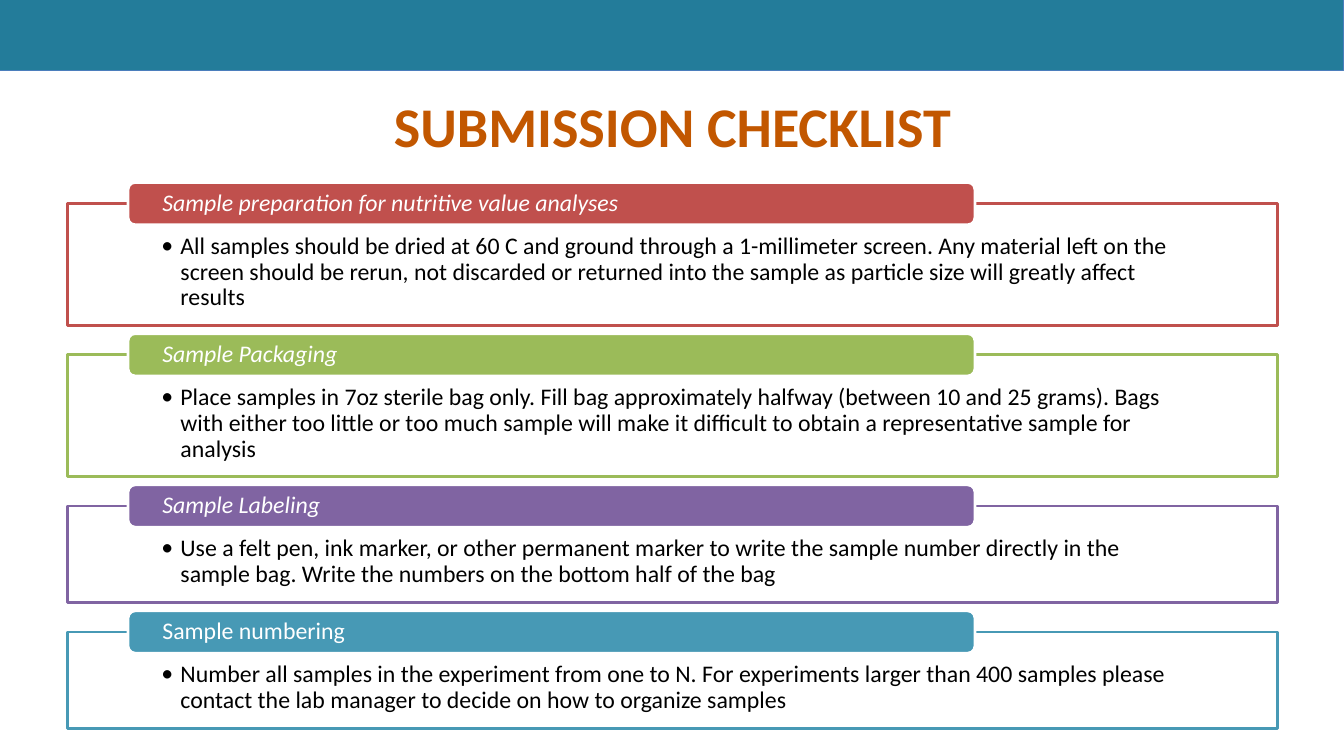
from lxml.etree import SubElement
from pptx import Presentation
from pptx.dml.color import RGBColor
from pptx.enum.shapes import MSO_SHAPE as Shape
from pptx.enum.text import MSO_ANCHOR as Anchor, MSO_AUTO_SIZE as AutoSize, PP_ALIGN as Align
from pptx.oxml.ns import qn
from pptx.util import Inches, Pt

# Content: heading, italic heading, colour, box height, text
TITLE = "SUBMISSION CHECKLIST"
CHECKS = [
    ("Sample preparation for nutritive value analyses", True, "red", 1.21,
     "All samples should be dried at 60 C and ground through a 1-millimeter screen. "
     "Any material left on the screen should be rerun, not discarded or returned into "
     "the sample as particle size will greatly affect results"),
    ("Sample Packaging", True, "green", 1.21,
     "Place samples in 7oz sterile bag only. Fill bag approximately halfway "
     "(between 10 and 25 grams). Bags with either too little or too much sample will "
     "make it difficult to obtain a representative sample for analysis"),
    ("Sample Labeling", True, "purple", 0.96,
     "Use a felt pen, ink marker, or other permanent marker to write the sample number "
     "directly in the sample bag. Write the numbers on the bottom half of the bag"),
    ("Sample numbering", False, "blue", 0.96,
     "Number all samples in the experiment from one to N. For experiments larger than "
     "400 samples please contact the lab manager to decide on how to organize samples"),
]
COLORS = {
    "band": "237C9A", "band_line": "4B7EBC", "title": "C25700", "text": "000000",
    "white": "FFFFFF", "red": "C0504D", "green": "9BBB59", "purple": "8064A2",
    "blue": "4799B5",
}
FONT = "Calibri"
LEFT, WIDTH = 0.67, 12
FIRST_TOP, GAP = 2.02, 0.29
TAB_LEFT, TAB_WIDTH, TAB_HEIGHT, TAB_RISE = 1.27, 8.4, 0.42, 0.21


def color(name):
    return RGBColor.from_string(COLORS[name])


def add_box(page, kind, place, fill, line, line_width):
    box = page.shapes.add_shape(kind, *map(Inches, place))
    box.shadow.inherit = False
    box.fill.solid()
    box.fill.fore_color.rgb = color(fill)
    box.line.color.rgb = color(line)
    box.line.width = Pt(line_width)
    return box


def add_bullet(para, indent):
    props = para._p.get_or_add_pPr()
    props.set("marL", str(Inches(indent)))
    props.set("indent", str(-Inches(indent)))
    SubElement(props, qn("a:buFont"), typeface=FONT)
    SubElement(props, qn("a:buChar"), char="•")


def write(box, text, insets, anchor, align, ink, **font):
    frame = box.text_frame
    frame.auto_size = AutoSize.NONE
    frame.word_wrap = True
    frame.vertical_anchor = anchor
    for side, inset in zip(("left", "top", "right", "bottom"), insets):
        setattr(frame, f"margin_{side}", Inches(inset))
    frame.text = text
    para = frame.paragraphs[0]
    para.alignment = align
    span = para.runs[0]
    for name, value in {"name": FONT, **font}.items():
        setattr(span.font, name, value)
    span.font.color.rgb = color(ink)
    return para


deck = Presentation()
deck.slide_width, deck.slide_height = Inches(13.33), Inches(7.5)
page = deck.slides.add_slide(deck.slide_layouts[5])

# Top band and title
add_box(page, Shape.RECTANGLE, (0, 0, 13.33, 0.7), "band", "band_line", 0.75)
title = page.shapes.title
title.left, title.top, title.width, title.height = map(Inches, (LEFT, 0.86, WIDTH, 0.65))
write(title, TITLE, (0.1, 0.05, 0.1, 0), Anchor.TOP, Align.CENTER, "title",
      size=Pt(40), bold=True)

# Checklist: an outlined box with a heading tab across its top edge
top = FIRST_TOP
for heading, italic, accent, height, text in CHECKS:
    box = add_box(page, Shape.RECTANGLE, (LEFT, top, WIDTH, height), "white", accent, 2)
    para = write(box, text, (0.93, 0.3, 0.93, 0.13), Anchor.TOP, Align.LEFT, "text",
                 size=Pt(17))
    para.line_spacing = 0.9
    add_bullet(para, 0.19)

    tab = add_box(page, Shape.ROUNDED_RECTANGLE,
                  (TAB_LEFT, top - TAB_RISE, TAB_WIDTH, TAB_HEIGHT), accent, "white", 2)
    para = write(tab, heading, (0.32, 0, 0.32, 0), Anchor.MIDDLE, Align.LEFT, "white",
                 size=Pt(17), italic=italic)
    para.line_spacing = 0.9
    top += height + GAP

deck.save("out.pptx")
